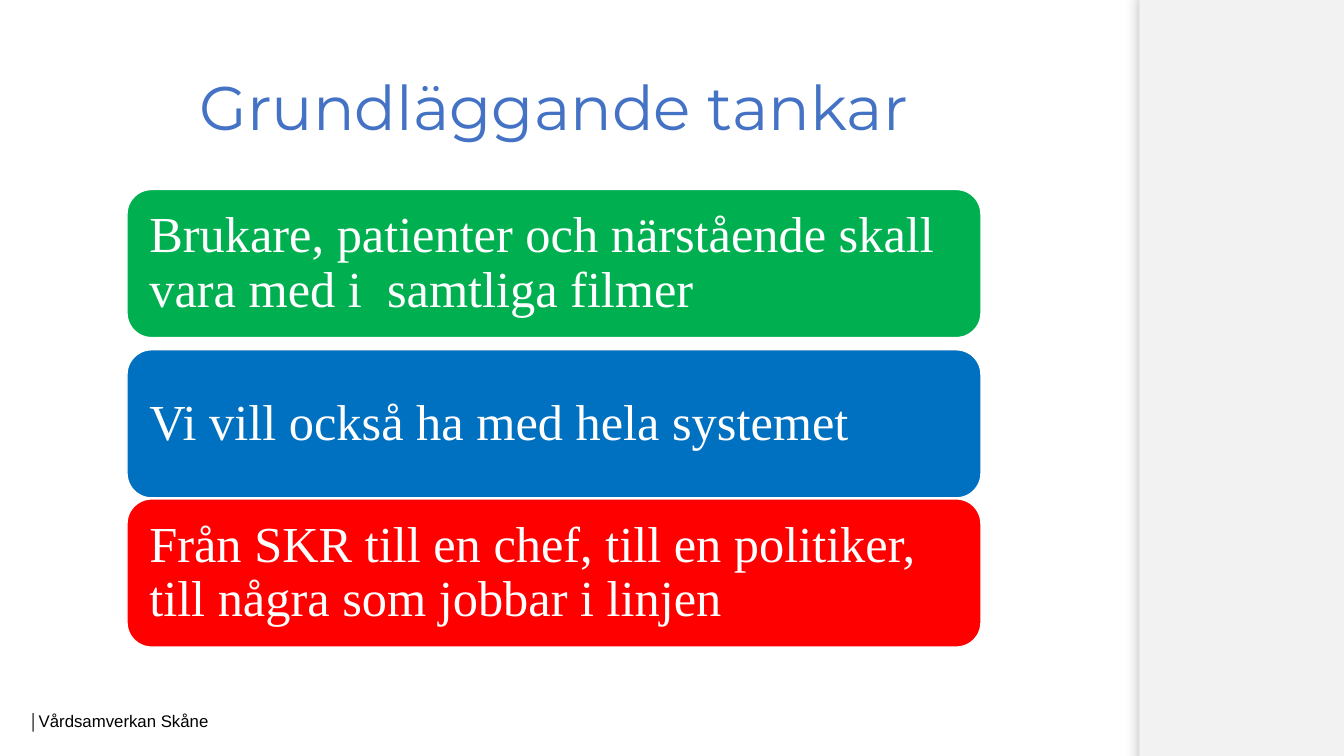
from pptx import Presentation
from pptx.dml.color import RGBColor
from pptx.enum.shapes import MSO_SHAPE as SHAPE
from pptx.enum.text import MSO_ANCHOR as ANCHOR, PP_ALIGN as ALIGN
from pptx.oxml import parse_xml
from pptx.oxml.ns import nsdecls
from pptx.util import Inches, Pt

THEME = {
    "panel": "F2F2F2",
    "white": "FFFFFF",
    "title": {"name": "Montserrat", "size": 44, "color": "4472C4", "bold": False},
    "card": {"name": "Times New Roman", "size": 36, "color": "FFFFFF", "bold": False},
    "bar": {"name": "Arial", "size": 11, "color": "000000", "bold": True},
    "footer": {"name": "Arial", "size": 12, "color": "000000", "bold": False},
}
CARDS = [
    ("Brukare, patienter och närstående skall vara med i  samtliga filmer", "00B050", 1.88),
    ("Vi vill också ha med hela systemet", "0070C0", 3.47),
    ("Från SKR till en chef, till en politiker, till några som jobbar i linjen", "FF0000", 4.95),
]
LEFT, WIDTH = Inches(1.26), Inches(8.47)


def add_run(p, text, style):
    r = p.add_run()
    r.text = text
    values = {"name": style["name"], "size": Pt(style["size"]), "bold": style["bold"]}
    for name, value in values.items():
        setattr(r.font, name, value)
    r.font.color.rgb = RGBColor.from_string(style["color"])


def set_frame(tf, inset_x, inset_y):
    values = {
        "word_wrap": True, "vertical_anchor": ANCHOR.MIDDLE,
        "margin_left": Inches(inset_x), "margin_right": Inches(inset_x),
        "margin_top": Inches(inset_y), "margin_bottom": Inches(inset_y),
    }
    for name, value in values.items():
        setattr(tf, name, value)
    return tf.paragraphs[0]


prs = Presentation()
prs.slide_width, prs.slide_height = Inches(13.33), Inches(7.5)
s = prs.slides.add_slide(prs.slide_layouts[5])

title = s.shapes.title
title.left, title.top, title.width, title.height = LEFT, Inches(0.63), WIDTH, Inches(0.93)
p = set_frame(title.text_frame, 0.1, 0.05)
p.alignment, p.line_spacing = ALIGN.CENTER, 0.9
add_run(p, "Grundläggande tankar", THEME["title"])

panel = s.shapes.add_shape(SHAPE.RECTANGLE, Inches(11.3), Inches(-0.1), Inches(2.04), Inches(7.67))
panel.fill.solid()
panel.fill.fore_color.rgb = RGBColor.from_string(THEME["panel"])
panel.line.fill.background()
panel._element.spPr.append(parse_xml(
    f'<a:effectLst {nsdecls("a")}><a:outerShdw blurRad="{Pt(11)}" dist="{Pt(4)}" dir="5400000" '
    'rotWithShape="0"><a:srgbClr val="000000"><a:alpha val="27000"/></a:srgbClr>'
    '</a:outerShdw></a:effectLst>'))

footer = s.shapes.add_textbox(Inches(0.19), Inches(6.95), Inches(3), Inches(0.4))
p = set_frame(footer.text_frame, 0.1, 0.05)
add_run(p, "│", THEME["bar"])
add_run(p, "Vårdsamverkan Skåne", THEME["footer"])

for text, color, top in CARDS:
    card = s.shapes.add_shape(SHAPE.ROUNDED_RECTANGLE, LEFT, Inches(top), WIDTH, Inches(1.47))
    card.shadow.inherit = False
    card.fill.solid()
    card.fill.fore_color.rgb = RGBColor.from_string(color)
    card.line.color.rgb = RGBColor.from_string(THEME["white"])
    card.line.width = Pt(1)
    p = set_frame(card.text_frame, 0.15, 0.15)
    p.alignment, p.line_spacing = ALIGN.LEFT, 0.9
    add_run(p, text, THEME["card"])

prs.save("out.pptx")
